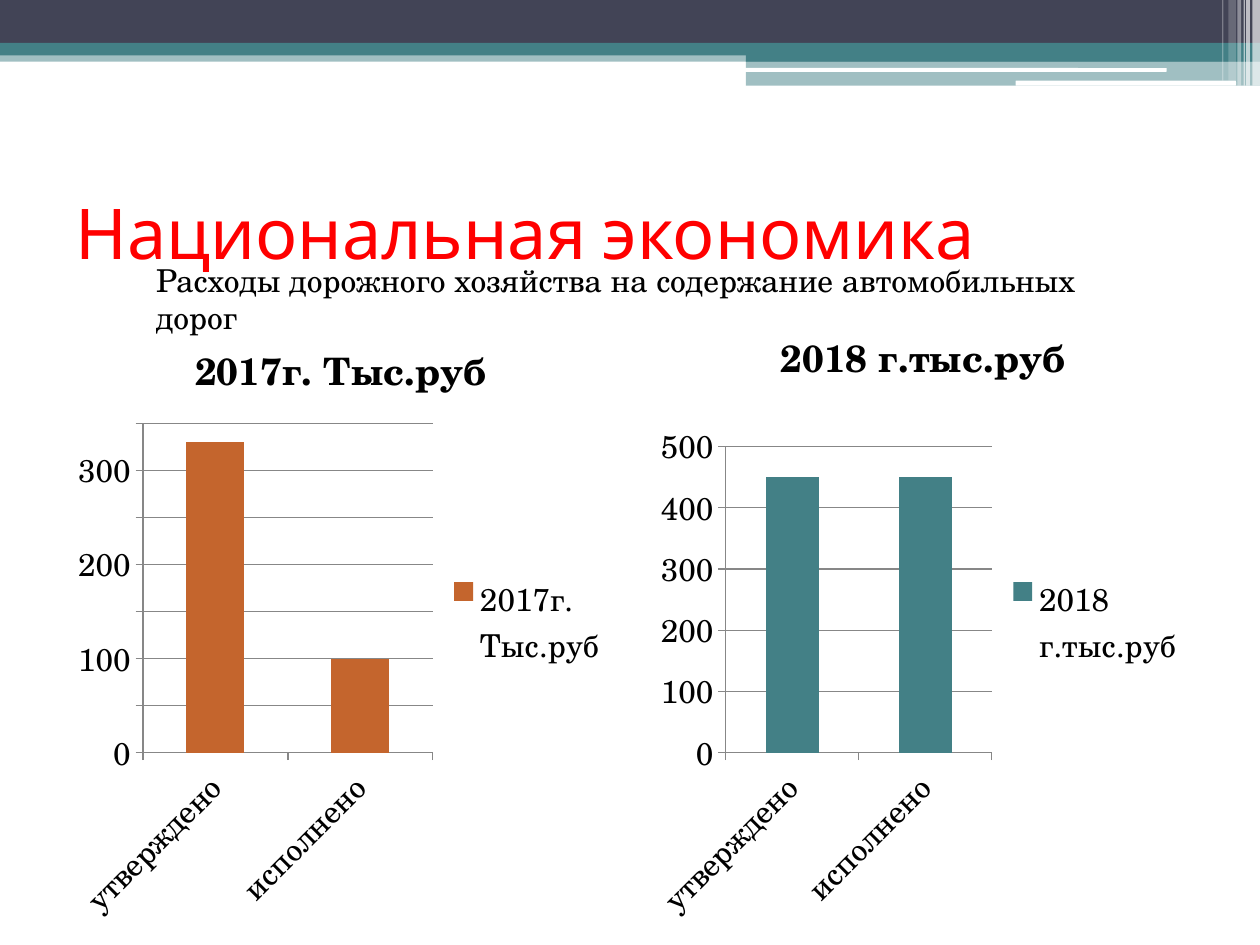
"""Build the slide on road maintenance spending with two column charts."""
from dataclasses import dataclass
from typing import Optional

from lxml import etree
from pptx import Presentation
from pptx.chart.data import CategoryChartData
from pptx.dml.color import RGBColor
from pptx.enum.chart import XL_CHART_TYPE, XL_LEGEND_POSITION, XL_TICK_MARK
from pptx.enum.shapes import MSO_SHAPE
from pptx.enum.text import MSO_ANCHOR
from pptx.oxml.ns import qn
from pptx.util import Inches, Pt

RECTANGLE = MSO_SHAPE.RECTANGLE
ROUNDED = MSO_SHAPE.ROUNDED_RECTANGLE
STACKED = XL_CHART_TYPE.COLUMN_STACKED
LEGEND_RIGHT = XL_LEGEND_POSITION.RIGHT
TICK_OUTSIDE = XL_TICK_MARK.OUTSIDE
TOP, MIDDLE = MSO_ANCHOR.TOP, MSO_ANCHOR.MIDDLE

SLATE = RGBColor(0x42, 0x44, 0x56)
TEAL = RGBColor(0x43, 0x80, 0x86)
ORANGE = RGBColor(0xC4, 0x65, 0x2D)
GREY = RGBColor(0x87, 0x87, 0x87)
WHITE = RGBColor(0xFF, 0xFF, 0xFF)
BLACK = RGBColor(0, 0, 0)
RED = RGBColor(0xFF, 0, 0)

TITLE_FONT = "Karla"
BODY_FONT = "TeX Gyre Schola"
CATEGORIES = ("утверждено", "исполнено")


@dataclass
class Band:
    left: float
    top: float
    width: float
    height: float
    color: RGBColor = WHITE
    opacity: int = 100
    shape: int = RECTANGLE


@dataclass
class YearChart:
    name: str
    left: float
    values: tuple
    color: RGBColor
    maximum: int
    step: int
    title_place: Optional[tuple] = None


BANDS = (
    Band(0, 0.4, 10, 0.09, TEAL, 50),
    Band(0, 0, 10, 0.34, SLATE),
    Band(0, 0.34, 10, 0.1, TEAL),
    Band(5.92, 0.39, 4.08, 0.1, TEAL),
    Band(5.92, 0.48, 4.08, 0.2, TEAL, 50),
    Band(5.91, 0.54, 3.35, 0.03, shape=ROUNDED),
    Band(8.06, 0.64, 1.75, 0.04, shape=ROUNDED),
    Band(9.94, 0, 0.06, 0.68, opacity=65),
    Band(9.89, 0, 0.03, 0.68, opacity=65),
    Band(9.87, 0, 0.01, 0.68, opacity=60),
    Band(9.82, 0, 0.03, 0.68, opacity=40),
    Band(9.75, 0, 0.06, 0.64, opacity=20),
    Band(9.7, 0, 0.01, 0.64, opacity=30),
)

CHARTS = (
    YearChart("2017г. Тыс.руб", 0.5, (330, 100), ORANGE, 350, 50),
    YearChart("2018 г.тыс.руб", 5.08, (450, 450), TEAL, 500, 100, (0.24, 0.01)),
)


def draw_band(page, band: Band) -> None:
    box = page.shapes.add_shape(band.shape, Inches(band.left), Inches(band.top),
                                Inches(band.width), Inches(band.height))
    box.shadow.inherit = False
    box.line.fill.background()
    box.fill.solid()
    box.fill.fore_color.rgb = band.color
    if band.opacity < 100:
        color = box.fill._xPr.find(qn("a:solidFill"))[0]
        etree.SubElement(color, qn("a:alpha"), val=str(band.opacity * 1000))


def format_font(font, size: float, name: str, color: RGBColor, bold: Optional[bool] = None) -> None:
    font.size, font.name, font.bold = Pt(size), name, bold
    font.color.rgb = color


def add_text(page, text: str, *, left: float, top: float, width: float, height: float,
             size: float, font: str, color: RGBColor, anchor=TOP) -> None:
    box = page.shapes.add_textbox(Inches(left), Inches(top), Inches(width), Inches(height))
    box.text_frame.word_wrap = True
    box.text_frame.vertical_anchor = anchor
    span = box.text_frame.paragraphs[0].add_run()
    span.text = text
    format_font(span.font, size, font, color)


def place_title(title, place: tuple) -> None:
    for old in title.findall(qn("c:layout")):
        title.remove(old)
    layout = etree.Element(qn("c:layout"))
    manual = etree.SubElement(layout, qn("c:manualLayout"))
    for tag, value in zip(("xMode", "yMode", "x", "y"), ("edge", "edge", *place)):
        etree.SubElement(manual, qn(f"c:{tag}"), val=str(value))
    title.find(qn("c:tx")).addnext(layout)


def draw_chart(page, year: YearChart) -> None:
    data = CategoryChartData()
    data.categories = CATEGORIES
    data.add_series(year.name, year.values)
    chart = page.shapes.add_chart(STACKED, Inches(year.left), Inches(2.46),
                                  Inches(4.42), Inches(4.95), data).chart
    format_font(chart.font, 18, BODY_FONT, BLACK)

    chart.has_title = True
    chart.chart_title.include_in_layout = False
    span = chart.chart_title.text_frame.paragraphs[0].add_run()
    span.text = year.name
    format_font(span.font, 21.6, BODY_FONT, BLACK, bold=True)

    chart.has_legend = True
    chart.legend.position = LEGEND_RIGHT
    chart.legend.include_in_layout = False

    plot = chart.plots[0]
    plot.vary_by_categories = False
    plot.gap_width, plot.overlap = 150, 100
    fill = plot.series[0].format.fill
    fill.solid()
    fill.fore_color.rgb = year.color

    values, categories = chart.value_axis, chart.category_axis
    values.minimum_scale, values.maximum_scale = 0, year.maximum
    values.major_unit = year.step
    values.has_major_gridlines = True
    for axis in (values, categories):
        axis.major_tick_mark = TICK_OUTSIDE
        format_font(axis.tick_labels.font, 18, BODY_FONT, BLACK)
    for line in (values.format.line, categories.format.line, values.major_gridlines.format.line):
        line.color.rgb = GREY
        line.width = Pt(0.75)

    root = chart.element
    root.xpath("c:chart/c:plotArea/c:catAx/c:txPr/a:bodyPr")[0].set("rot", "-2700000")
    if year.title_place:
        place_title(root.xpath("c:chart/c:title")[0], year.title_place)


def main() -> None:
    deck = Presentation()
    deck.slide_width, deck.slide_height = Inches(10), Inches(7.5)
    page = deck.slides.add_slide(deck.slide_layouts[6])
    for band in BANDS:
        draw_band(page, band)
    add_text(page, "Национальная экономика", left=0.5, top=1.25, width=9, height=1.17,
             size=40, font=TITLE_FONT, color=RED, anchor=MIDDLE)
    for year in CHARTS:
        draw_chart(page, year)
    add_text(page, "Расходы дорожного хозяйства на содержание автомобильных дорог",
             left=1.14, top=2.02, width=7.88, height=0.4,
             size=18, font=BODY_FONT, color=BLACK)
    deck.save("out.pptx")


if __name__ == "__main__":
    main()
